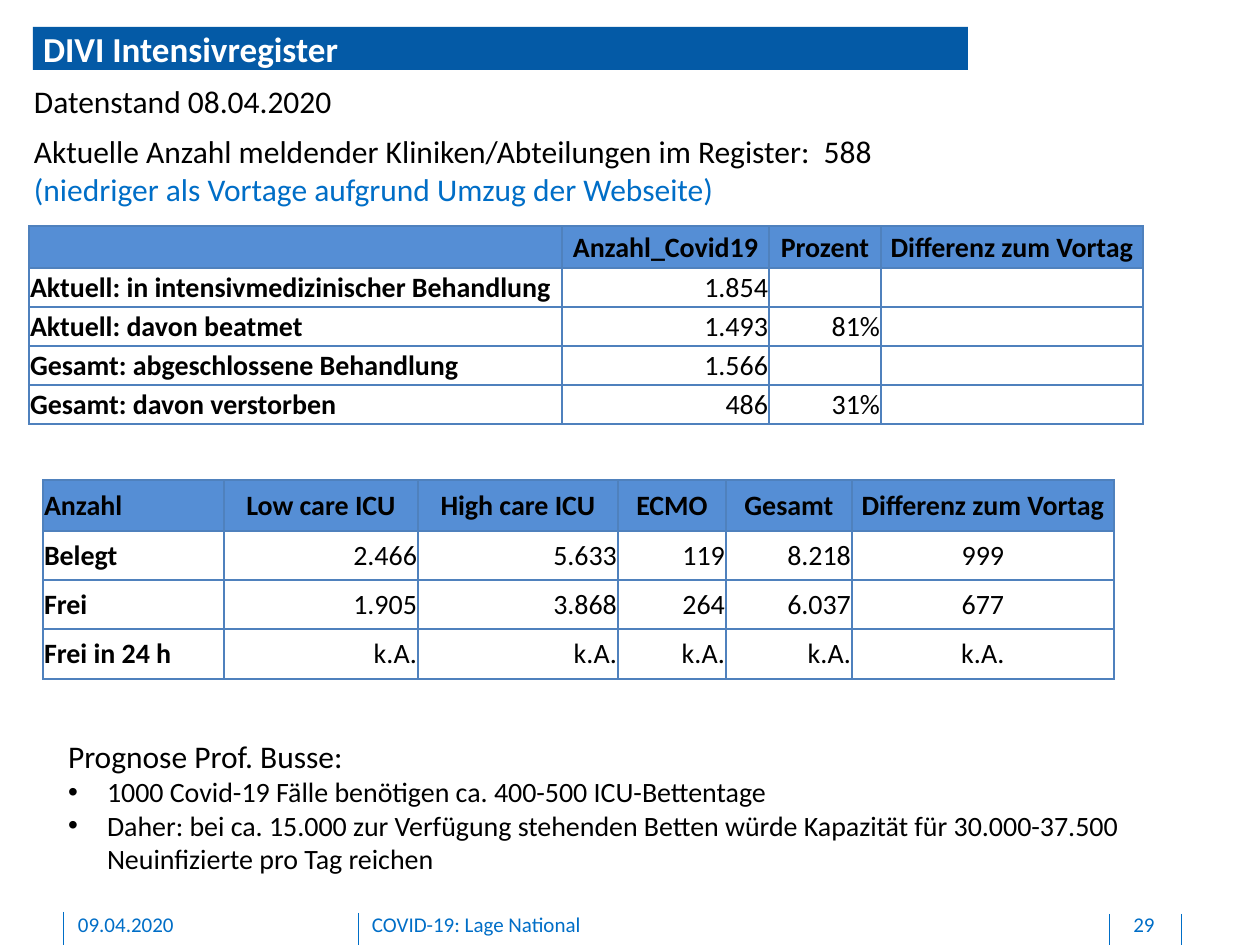
from lxml import etree
from pptx import Presentation
from pptx.dml.color import RGBColor
from pptx.enum.shapes import MSO_CONNECTOR
from pptx.enum.text import MSO_ANCHOR, MSO_AUTO_SIZE, PP_ALIGN
from pptx.oxml.ns import qn
from pptx.util import Emu, Pt

LEFT, CENTER, RIGHT = PP_ALIGN.LEFT, PP_ALIGN.CENTER, PP_ALIGN.RIGHT
TOP, MIDDLE = MSO_ANCHOR.TOP, MSO_ANCHOR.MIDDLE
NO_AUTOFIT = MSO_AUTO_SIZE.NONE
STRAIGHT = MSO_CONNECTOR.STRAIGHT

PX_PER_INCH = 126
FONT = "Calibri"
COLORS = {
    "text": "000000",
    "white": "FFFFFF",
    "blue": "006EC7",
    "title": "045AA6",
    "header": "558ED5",
    "border": "4F81BD",
}
TEXT_INSETS = (13, 6, 13, 6)
FOOTER_INSETS = (0, 0, 0, 6)
BULLET_INDENT = 39

REGISTER_ROWS = [
    ["", "Anzahl_Covid19", "Prozent", "Differenz zum Vortag"],
    ["Aktuell: in intensivmedizinischer Behandlung", "1.854", "", ""],
    ["Aktuell: davon beatmet", "1.493", "81%", ""],
    ["Gesamt: abgeschlossene Behandlung", "1.566", "", ""],
    ["Gesamt: davon verstorben", "486", "31%", ""],
]
CAPACITY_ROWS = [
    ["Anzahl", "Low care ICU", "High care ICU", "ECMO", "Gesamt", "Differenz zum Vortag"],
    ["Belegt", "2.466", "5.633", "119", "8.218", "999"],
    ["Frei", "1.905", "3.868", "264", "6.037", "677"],
    ["Frei in 24 h", "k.A.", "k.A.", "k.A.", "k.A.", "k.A."],
]
FORECAST = [
    "1000 Covid-19 Fälle benötigen ca. 400-500 ICU-Bettentage",
    "Daher: bei ca. 15.000 zur Verfügung stehenden Betten würde Kapazität "
    "für 30.000-37.500 Neuinfizierte pro Tag reichen",
]


def px(length):
    return Emu(round(length * 914400 / PX_PER_INCH))


def rgb(name):
    return RGBColor.from_string(COLORS[name])


def add_text(paragraph, text, size=18, color="text", bold=False, align=LEFT):
    paragraph.alignment = align
    run = paragraph.add_run()
    run.text = text
    run.font.name = FONT
    run.font.size = Pt(size)
    run.font.bold = bold
    run.font.color.rgb = rgb(color)


def place(shape, left, top, width, height):
    shape.left, shape.top = px(left), px(top)
    shape.width, shape.height = px(width), px(height)


def set_frame(text_frame, insets, anchor=TOP):
    text_frame.word_wrap = True
    text_frame.auto_size = NO_AUTOFIT
    text_frame.vertical_anchor = anchor
    (text_frame.margin_left, text_frame.margin_top,
     text_frame.margin_right, text_frame.margin_bottom) = map(px, insets)


def add_text_box(slide, box, insets=TEXT_INSETS):
    """Add a wrapping text box and return its first paragraph."""
    shape = slide.shapes.add_textbox(*map(px, box))
    set_frame(shape.text_frame, insets)
    return shape.text_frame.paragraphs[0]


def set_bullet(paragraph, character=None):
    """Give the paragraph a hanging bullet, or none without a character."""
    indent = px(BULLET_INDENT) if character else 0
    properties = paragraph._p.get_or_add_pPr()
    properties.set("marL", str(indent))
    properties.set("indent", str(-indent))
    if character:
        etree.SubElement(properties, qn("a:buChar")).set("char", character)
    else:
        etree.SubElement(properties, qn("a:buNone"))


def add_divider(slide, x, top):
    line = slide.shapes.add_connector(STRAIGHT, px(x), px(top), px(x), px(945))
    line.line.color.rgb = rgb("blue")
    line.line.width = Pt(0.5)
    etree.SubElement(line._element.spPr, qn("a:effectLst"))


def add_borders(cell):
    properties = cell._tc.get_or_add_tcPr()
    for side in ("lnL", "lnR", "lnT", "lnB"):
        line = etree.SubElement(properties, qn(f"a:{side}"), w=str(Pt(1)))
        fill = etree.SubElement(line, qn("a:solidFill"))
        etree.SubElement(fill, qn("a:srgbClr"), val=COLORS["border"])


def fill_cell(cell, text, align, header, bold):
    cell.margin_left = cell.margin_top = cell.margin_right = px(1)
    cell.margin_bottom = 0
    cell.vertical_anchor = MIDDLE
    add_text(cell.text_frame.paragraphs[0], text, size=16, bold=bold, align=align)
    add_borders(cell)
    if header:
        cell.fill.solid()
        cell.fill.fore_color.rgb = rgb("header")
    else:
        cell.fill.background()


def add_data_table(slide, left, top, widths, heights, rows):
    """Add a table: labels left, header and last column centred, numbers right."""
    frame = slide.shapes.add_table(len(rows), len(widths), px(left), px(top),
                                   px(sum(widths)), px(sum(heights)))
    table = frame.table
    table.first_row = table.horz_banding = False
    for column, width in zip(table.columns, widths):
        column.width = px(width)
    last = len(widths) - 1
    for i, (height, values) in enumerate(zip(heights, rows)):
        table.rows[i].height = px(height)
        for j, text in enumerate(values):
            align = LEFT if j == 0 else CENTER if i == 0 or j == last else RIGHT
            fill_cell(table.cell(i, j), text, align, header=i == 0,
                      bold=i == 0 or j == 0)


def add_title(slide):
    title = slide.shapes.title
    place(title, 33, 27, 935, 43)
    title.fill.solid()
    title.fill.fore_color.rgb = rgb("title")
    set_frame(title.text_frame, (10, 0, 0, 0), MIDDLE)
    add_text(title.text_frame.paragraphs[0], "DIVI Intensivregister",
             size=20, color="white", bold=True)


def add_forecast(slide):
    body = slide.placeholders[1]
    place(body, 55, 731, 1137, 152)
    set_frame(body.text_frame, TEXT_INSETS)
    heading = body.text_frame.paragraphs[0]
    heading.space_before = Pt(0)
    set_bullet(heading)
    add_text(heading, "Prognose Prof. Busse:")
    for text in FORECAST:
        paragraph = body.text_frame.add_paragraph()
        paragraph.space_before = Pt(0)
        set_bullet(paragraph, "•")
        add_text(paragraph, text, size=16)


def add_footer(slide):
    for x, top in ((63, 912), (358, 913), (1109, 914), (1181, 914)):
        add_divider(slide, x, top)
    for text, left, width, align in (
        ("09.04.2020", 78, 256, LEFT),
        ("COVID-19: Lage National", 372, 714, LEFT),
        ("29", 1110, 68, CENTER),
    ):
        paragraph = add_text_box(slide, (left, 912, width, 27), FOOTER_INSETS)
        add_text(paragraph, text, size=12, color="blue", align=align)


def main():
    presentation = Presentation()
    presentation.slide_width, presentation.slide_height = px(1260), px(945)
    slide = presentation.slides.add_slide(presentation.slide_layouts[1])

    add_footer(slide)
    add_title(slide)
    add_text(add_text_box(slide, (21, 76, 558, 50)), "Datenstand 08.04.2020")
    count = add_text_box(slide, (21, 126, 935, 89))
    add_text(count, "Aktuelle Anzahl meldender Kliniken/Abteilungen im Register:  588 ")
    add_text(count, "(niedriger als Vortage aufgrund Umzug der Webseite)", color="blue")
    add_data_table(slide, 29, 226, [533, 207, 112, 262], [42] + [39] * 4, REGISTER_ROWS)
    add_data_table(slide, 43, 480, [181, 194, 200, 108, 126, 262],
                   [51, 49, 49, 50], CAPACITY_ROWS)
    add_forecast(slide)
    presentation.save("out.pptx")


if __name__ == "__main__":
    main()
